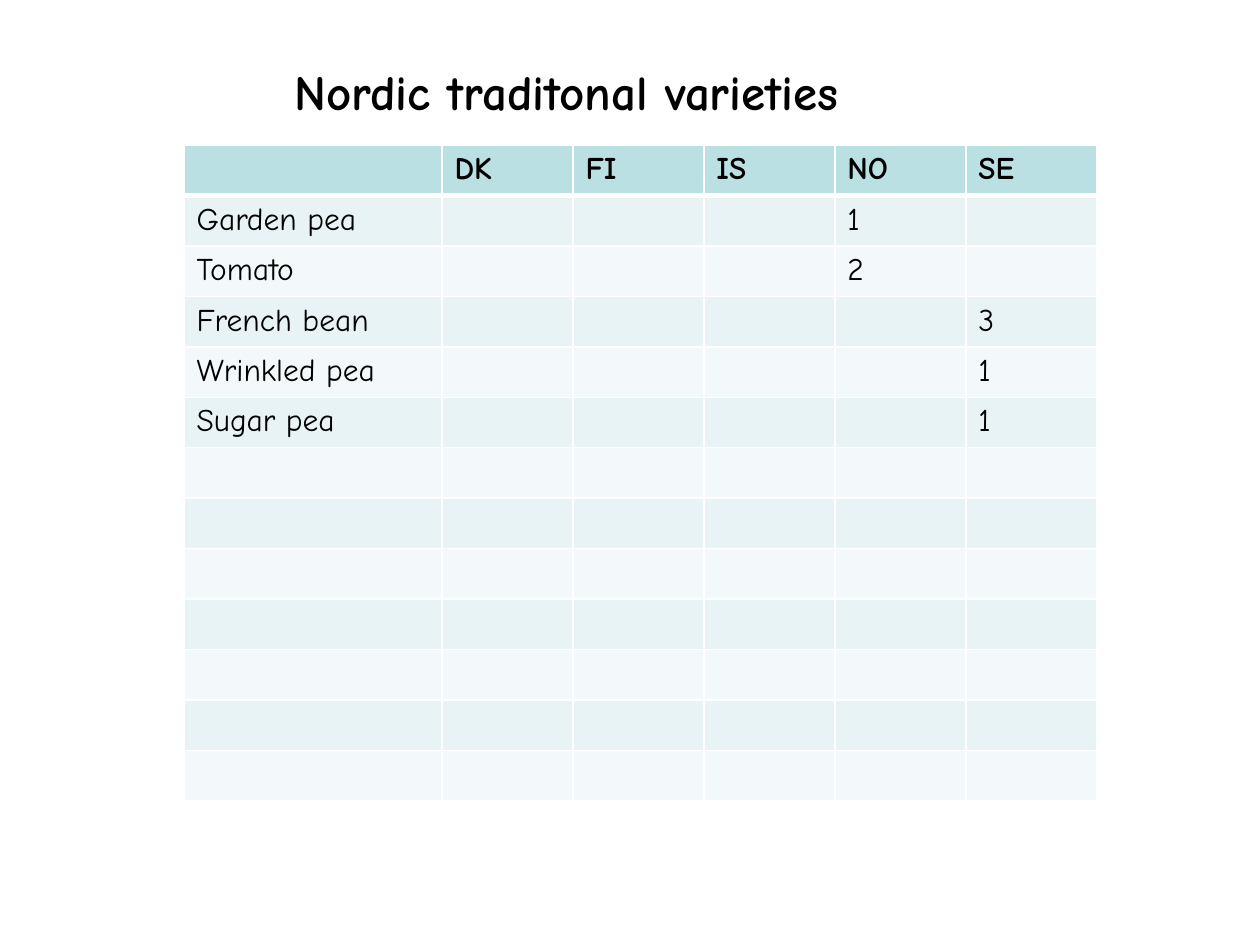
from typing import NamedTuple

from pptx import Presentation, util as u
from pptx.dml.color import RGBColor
from pptx.enum import text
from pptx.oxml.ns import qn
from lxml import etree

PX = 914400 // 126
FONT = "Comic Neue"
INK, WHITE, HEADER = "000000", "FFFFFF", "BBE0E3"
BANDS = ("E7F3F4", "F3F9FA")
COUNTRIES = ("DK", "FI", "IS", "NO", "SE")
ROW_COUNT, ROW_H = 13, 49
NAME_W, COUNTRY_W = 258, 131


class Variety(NamedTuple):
    crop: str
    country: str
    count: int


VARIETIES = (
    Variety("Garden pea", "NO", 1),
    Variety("Tomato", "NO", 2),
    Variety("French bean", "SE", 3),
    Variety("Wrinkled pea", "SE", 1),
    Variety("Sugar pea", "SE", 1),
)


def px(n: int) -> u.Emu:
    return u.Emu(n * PX)


def rgb(value: str) -> RGBColor:
    return RGBColor.from_string(value)


def write(tf, content: str, *, size: int, bold: bool = False) -> None:
    """Write one formatted line; an empty one still gets its font height."""
    p = tf.paragraphs[0]
    p.alignment = text.PP_ALIGN.LEFT
    if not content:
        end = etree.SubElement(p._p, qn("a:endParaRPr"), sz=str(size * 100))
        etree.SubElement(end, qn("a:latin"), typeface=FONT)
        return
    r = p.add_run()
    r.text = content
    r.font.name, r.font.size, r.font.bold = FONT, u.Pt(size), bold
    r.font.color.rgb = rgb(INK)


def add_borders(cell, **widths: int) -> None:
    """Draw white borders, given in points by side: L, R, T, B."""
    tc_pr = cell._tc.get_or_add_tcPr()
    for side, width in widths.items():
        ln = etree.SubElement(tc_pr, qn(f"a:ln{side}"), w=str(u.Pt(width)))
        fill = etree.SubElement(ln, qn("a:solidFill"))
        etree.SubElement(fill, qn("a:srgbClr"), val=WHITE)


def add_title(s, content: str) -> None:
    sp = s.shapes.title
    sp.left, sp.top, sp.width, sp.height = map(px, (282, 55, 794, 72))
    tf = sp.text_frame
    tf.word_wrap = True
    tf.auto_size = text.MSO_AUTO_SIZE.SHAPE_TO_FIT_TEXT
    tf.vertical_anchor = text.MSO_ANCHOR.TOP
    write(tf, content, size=28, bold=True)


def add_variety_table(s) -> None:
    rows = [("", *COUNTRIES)]
    for v in VARIETIES:
        counts = (str(v.count) if c == v.country else "" for c in COUNTRIES)
        rows.append((v.crop, *counts))
    widths = [NAME_W] + [COUNTRY_W] * len(COUNTRIES)
    rows += [("",) * len(widths)] * (ROW_COUNT - len(rows))

    table = s.shapes.add_table(ROW_COUNT, len(widths), px(184), px(145),
                               px(sum(widths)), px(ROW_H * ROW_COUNT)).table
    for column, width in zip(table.columns, widths):
        column.width = px(width)
    for i, values in enumerate(rows):
        table.rows[i].height = px(ROW_H)
        for j, value in enumerate(values):
            cell = table.cell(i, j)
            write(cell.text_frame, value, size=18, bold=i == 0)
            add_borders(cell, L=1, R=1, T=3 if i == 1 else 1, B=3 if i == 0 else 1)
            cell.fill.solid()
            cell.fill.fore_color.rgb = rgb(BANDS[(i - 1) % 2] if i else HEADER)


def main() -> None:
    prs = Presentation()
    prs.slide_width, prs.slide_height = u.Inches(10), u.Inches(7.5)
    s = prs.slides.add_slide(prs.slide_layouts[5])
    add_variety_table(s)
    add_title(s, "Nordic traditonal varieties")
    prs.save("out.pptx")


if __name__ == "__main__":
    main()
